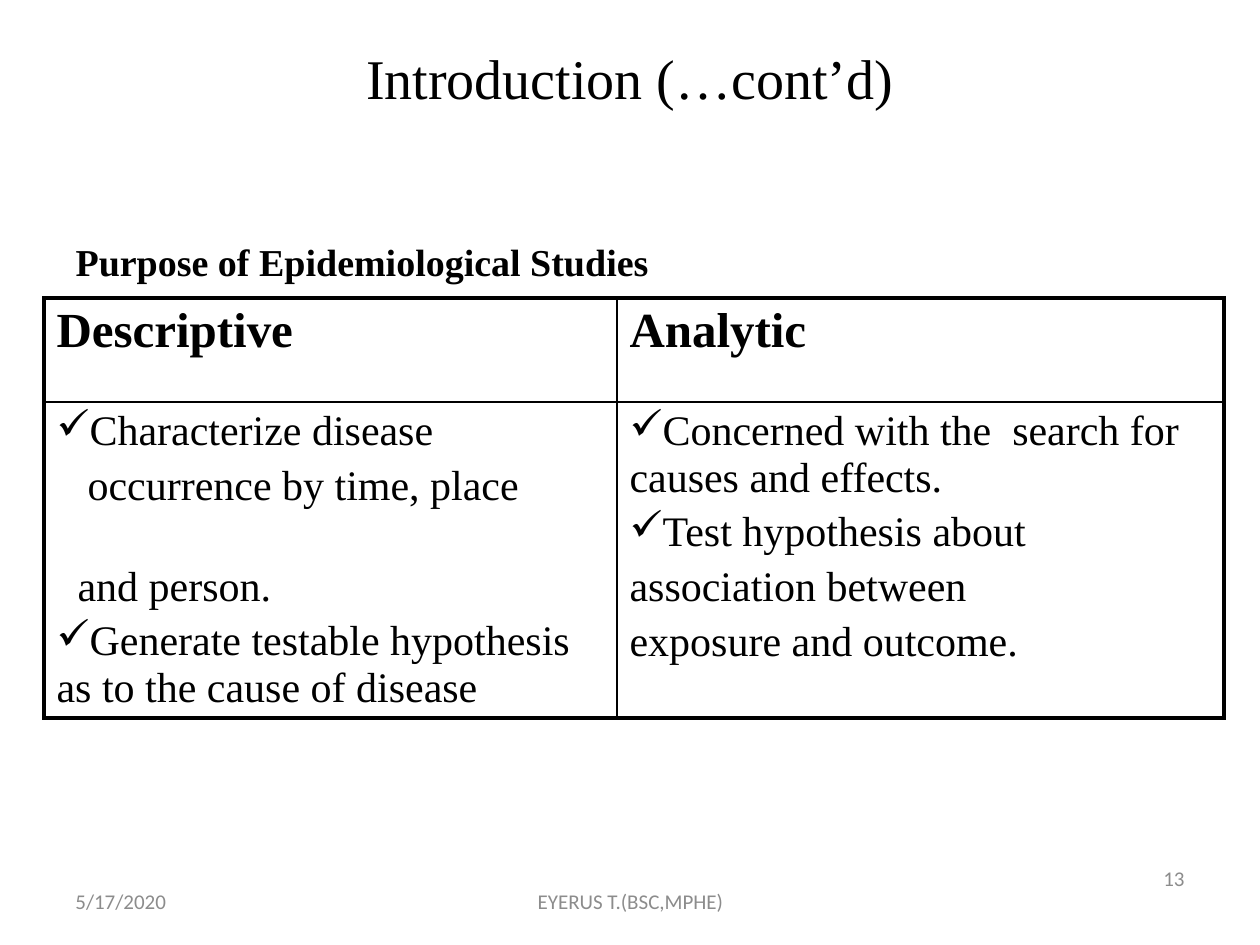
from dataclasses import dataclass

from pptx import Presentation
from pptx import util as u
from pptx.dml.color import RGBColor
from pptx.enum import text
from pptx.oxml import parse_xml
from pptx.oxml.ns import nsdecls

PX = u.Inches(1) / 126
CHECK = "✓"


def px(length):
    return u.Emu(round(length * PX))


@dataclass(frozen=True)
class Theme:
    serif: str = "Times New Roman"
    sans: str = "Calibri"
    ink: str = "000000"
    muted: str = "8C8C8C"
    title: float = 32
    subtitle: float = 21.7
    header: float = 28
    cell: float = 24
    footer: float = 12
    outer_line: float = 2.25
    inner_line: float = 1


@dataclass(frozen=True)
class Line:
    """One paragraph of a table cell; before is the space above it in points."""
    words: str
    bullet: str = ""
    indent: int = 0
    before: float = 4.8


class SlideBuilder:
    def __init__(self, slide, theme):
        self.slide = slide
        self.theme = theme

    def place(self, shape, left, top, width, height):
        shape.left, shape.top = px(left), px(top)
        shape.width, shape.height = px(width), px(height)

    def style(self, paragraph, size, font=None, color=None, bold=False):
        for run in paragraph.runs:
            run.font.name = font or self.theme.serif
            run.font.size = u.Pt(size)
            run.font.bold = bold
            run.font.color.rgb = RGBColor.from_string(color or self.theme.ink)

    def indent(self, paragraph, left, first=0, bullet=""):
        properties = paragraph._p.get_or_add_pPr()
        properties.set("marL", str(px(left)))
        properties.set("indent", str(px(first)))
        mark = f'buChar {nsdecls("a")} char="{bullet}"' if bullet else f'buNone {nsdecls("a")}'
        properties.append(parse_xml(f"<a:{mark}/>"))

    def title(self, words, *box):
        heading = self.slide.shapes.title
        self.place(heading, *box)
        frame = heading.text_frame
        frame.text = words
        frame.vertical_anchor = text.MSO_ANCHOR.MIDDLE
        frame.paragraphs[0].alignment = text.PP_ALIGN.CENTER
        self.style(frame.paragraphs[0], self.theme.title)

    def subtitle(self, words, *box, inset):
        body = self.slide.placeholders[1]
        self.place(body, *box)
        frame = body.text_frame
        frame.text = words
        frame.margin_top = px(inset)
        paragraph = frame.paragraphs[0]
        paragraph.space_before = u.Pt(0)
        self.indent(paragraph, 44, -44)
        self.style(paragraph, self.theme.subtitle, bold=True)

    def footer(self, words, align, *box):
        label = self.slide.shapes.add_textbox(*map(px, box))
        frame = label.text_frame
        frame.word_wrap = True
        frame.text = words
        frame.vertical_anchor = text.MSO_ANCHOR.MIDDLE
        frame.paragraphs[0].alignment = align
        self.style(frame.paragraphs[0], self.theme.footer, self.theme.sans, self.theme.muted)

    def cell_borders(self, cell, outer_sides):
        properties = cell._tc.get_or_add_tcPr()
        for side in "LRTB":
            points = self.theme.outer_line if side in outer_sides else self.theme.inner_line
            properties.append(parse_xml(
                f'<a:ln{side} {nsdecls("a")} w="{u.Pt(points)}"><a:solidFill>'
                f'<a:srgbClr val="{self.theme.ink}"/></a:solidFill></a:ln{side}>'))
        cell.fill.background()

    def cell_text(self, cell, lines, size, bold):
        frame = cell.text_frame
        frame.text = "\n".join(line.words for line in lines)
        for paragraph, line in zip(frame.paragraphs, lines):
            paragraph.space_before = u.Pt(line.before)
            self.indent(paragraph, line.indent, bullet=line.bullet)
            self.style(paragraph, size, bold=bold)

    def table(self, rows, left, top, widths, heights):
        grid = self.slide.shapes.add_table(
            len(rows), len(widths), px(left), px(top), px(sum(widths)), px(sum(heights))).table
        for column, width in zip(grid.columns, widths):
            column.width = px(width)
        for r, (row, height) in enumerate(zip(rows, heights)):
            grid.rows[r].height = px(height)
            for c, lines in enumerate(row):
                sides = ("T" if r == 0 else "") + ("B" if r == len(rows) - 1 else "")
                sides += ("L" if c == 0 else "") + ("R" if c == len(row) - 1 else "")
                cell = grid.cell(r, c)
                self.cell_borders(cell, sides)
                size = self.theme.cell if r else self.theme.header
                self.cell_text(cell, lines, size, bold=r == 0)


def main():
    deck = Presentation()
    deck.slide_width, deck.slide_height = u.Inches(10), u.Inches(7.5)
    page = SlideBuilder(deck.slides.add_slide(deck.slide_layouts[1]), Theme())

    page.title("Introduction (…cont’d)", 63, 0, 1134, 155)
    page.subtitle("Purpose of Epidemiological Studies", 63, 175, 1134, 99, inset=63)

    descriptive = [
        Line("Characterize disease", CHECK),
        Line("occurrence by time, place", indent=31),
        Line("and person.", indent=21, before=31),
        Line("Generate testable hypothesis as to the cause of disease", CHECK),
    ]
    analytic = [
        Line("Concerned with the  search for causes and effects.", CHECK),
        Line("Test hypothesis about", CHECK),
        Line("association between"),
        Line("exposure and outcome."),
    ]
    purposes = [[[Line("Descriptive")], [Line("Analytic")]], [descriptive, analytic]]
    page.table(purposes, 44, 298, widths=[573, 607], heights=[104, 316])

    page.footer("13", text.PP_ALIGN.RIGHT, 903, 853, 294, 50)
    page.footer("5/17/2020", text.PP_ALIGN.LEFT, 63, 876, 294, 50)
    page.footer("EYERUS T.(BSC,MPHE)", text.PP_ALIGN.CENTER, 431, 876, 399, 50)
    deck.save("out.pptx")


if __name__ == "__main__":
    main()
